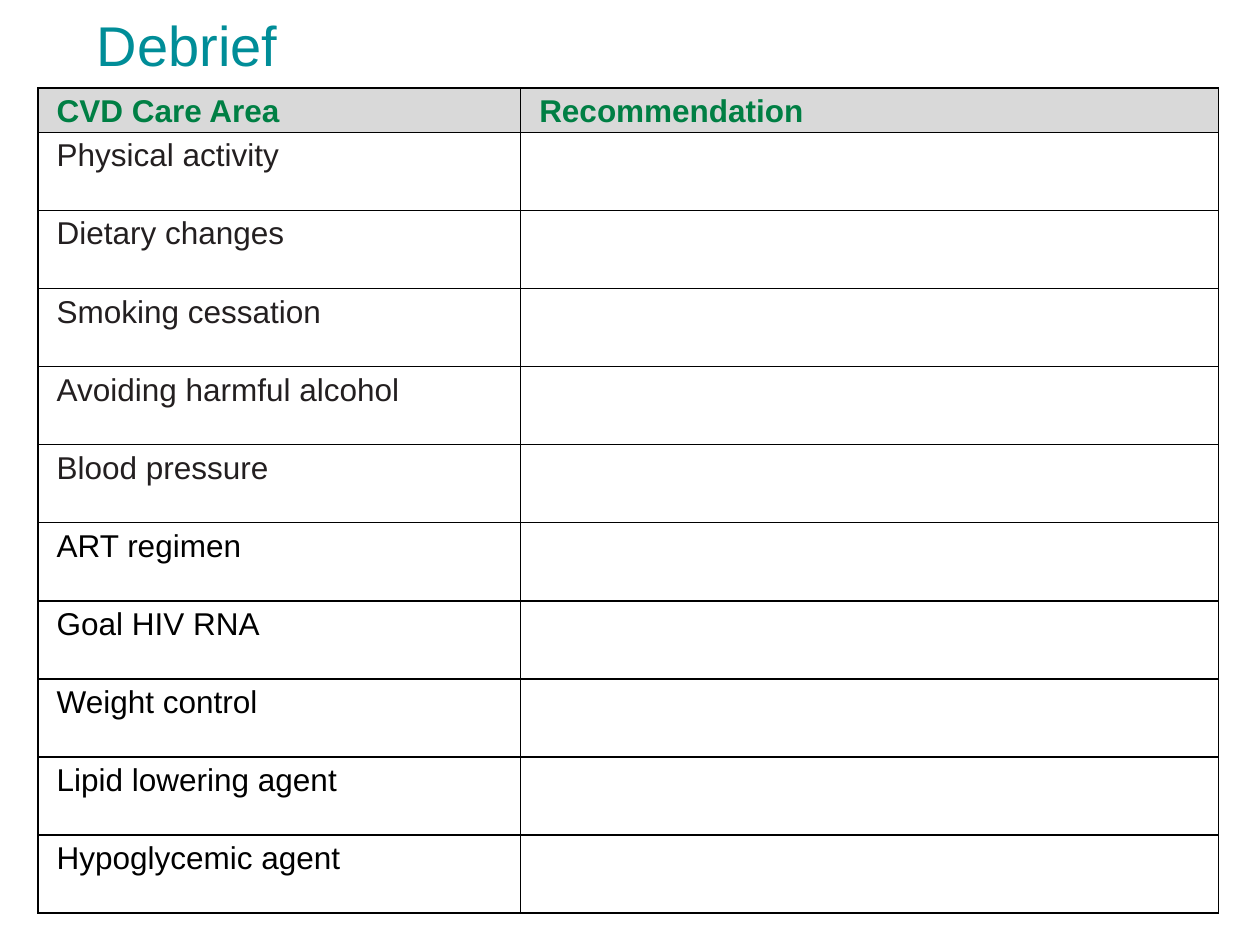
from lxml.etree import SubElement
from pptx import Presentation
from pptx.dml.color import RGBColor
from pptx.enum.text import MSO_ANCHOR
from pptx.oxml.ns import qn
from pptx.util import Inches, Pt

TEAL = RGBColor(0x00, 0x8D, 0x98)
GREEN = RGBColor(0x00, 0x7F, 0x44)
CHARCOAL = RGBColor(0x23, 0x1F, 0x20)
BLACK = RGBColor(0, 0, 0)
GREY = RGBColor(0xD9, 0xD9, 0xD9)

HEADERS = ["CVD Care Area", "Recommendation"]
LIFESTYLE_AREAS = ["Physical activity", "Dietary changes", "Smoking cessation",
                   "Avoiding harmful alcohol", "Blood pressure"]
TREATMENT_AREAS = ["ART regimen", "Goal HIV RNA", "Weight control",
                   "Lipid lowering agent", "Hypoglycemic agent"]
COL_WIDTHS = [3.83, 5.54]
HEADER_HEIGHT, ROW_HEIGHT = 0.33, 0.62
CELL_MARGINS = {"margin_left": Inches(0.15), "margin_right": Inches(0.15),
                "margin_top": Inches(0.02), "margin_bottom": Inches(0)}


def set_attrs(obj, values):
    for name, value in values.items():
        setattr(obj, name, value)


def write(p, text, size, color, bold=False):
    r = p.add_run()
    r.text = text
    set_attrs(r.font, {"name": "Arial", "size": Pt(size), "bold": bold})
    r.font.color.rgb = color


def add_title(slide, left, top, width, height):
    tf = slide.shapes.add_textbox(left, top, width, height).text_frame
    set_attrs(tf, {"word_wrap": True, "vertical_anchor": MSO_ANCHOR.MIDDLE})
    p = tf.paragraphs[0]
    p.line_spacing = 0.9
    write(p, "Debrief", 32, TEAL)


def add_borders(cell):
    tc_pr = cell._tc.get_or_add_tcPr()
    for side in ("lnL", "lnR", "lnT", "lnB"):
        ln = SubElement(tc_pr, qn(f"a:{side}"), w=str(Pt(1)))
        fill = SubElement(ln, qn("a:solidFill"))
        SubElement(fill, qn("a:srgbClr"), val=str(BLACK))


def fill_cell(cell, text, color, header):
    set_attrs(cell, CELL_MARGINS)
    add_borders(cell)
    if header:
        cell.fill.solid()
        cell.fill.fore_color.rgb = GREY
    else:
        cell.fill.background()
    if text:
        p = cell.text_frame.paragraphs[0]
        p.line_spacing = 1.1
        p_pr = p._p.get_or_add_pPr()
        p_pr.set("marL", str(Inches(0.01)))
        p_pr.set("indent", str(Inches(-0.01)))
        write(p, text, 18, color, header)


def add_care_table(slide, left, top, width):
    rows = [(HEADERS, GREEN)]
    rows += [([area, ""], CHARCOAL) for area in LIFESTYLE_AREAS]
    rows += [([area, ""], BLACK) for area in TREATMENT_AREAS]
    heights = [HEADER_HEIGHT] + [ROW_HEIGHT] * (len(rows) - 1)
    table = slide.shapes.add_table(len(rows), len(COL_WIDTHS), left, top,
                                   width, Inches(sum(heights))).table
    set_attrs(table, {"first_row": False, "horz_banding": False})
    for column, col_width in zip(table.columns, COL_WIDTHS):
        column.width = Inches(col_width)
    for i, (texts, color) in enumerate(rows):
        table.rows[i].height = Inches(heights[i])
        for j, text in enumerate(texts):
            fill_cell(table.cell(i, j), text, color, header=i == 0)


def main():
    prs = Presentation()
    set_attrs(prs, {"slide_width": Inches(10), "slide_height": Inches(7.5)})
    slide = prs.slides.add_slide(prs.slide_layouts[6])
    add_title(slide, Inches(0.67), Inches(0), Inches(8.62), Inches(0.77))
    add_care_table(slide, Inches(0.3), Inches(0.7), Inches(sum(COL_WIDTHS)))
    prs.save("out.pptx")


if __name__ == "__main__":
    main()
